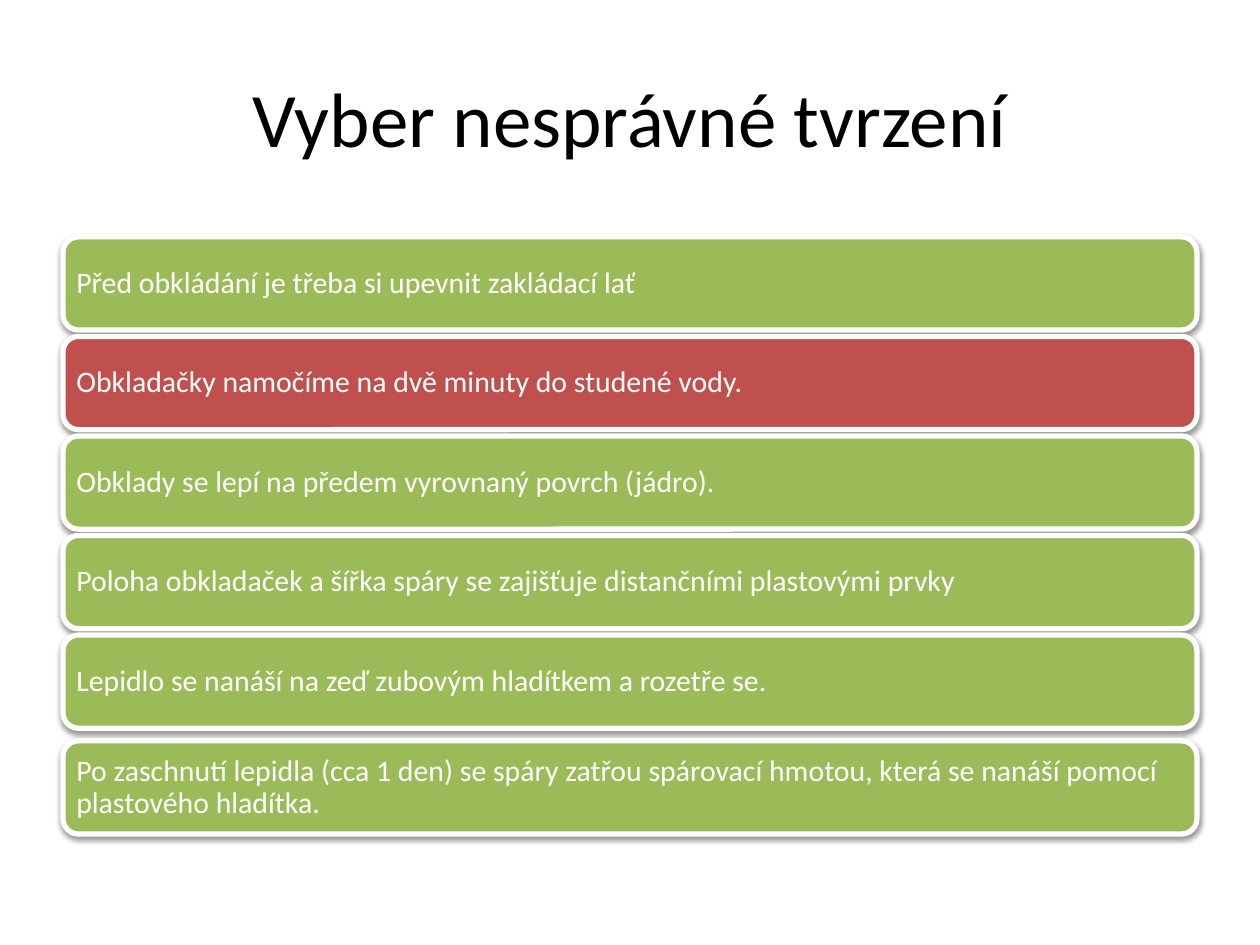
from lxml import etree
from pptx import Presentation
from pptx.dml.color import RGBColor
from pptx.enum.shapes import MSO_SHAPE
from pptx.enum.text import MSO_ANCHOR, PP_ALIGN
from pptx.oxml.ns import qn
from pptx.util import Inches, Pt

ROUNDED = MSO_SHAPE.ROUNDED_RECTANGLE
MIDDLE = MSO_ANCHOR.MIDDLE
LEFT, CENTER = PP_ALIGN.LEFT, PP_ALIGN.CENTER

FONT = "Calibri"
COLORS = {
    "title": "000000",
    "light": "FFFFFF",
    "correct": "9BBB59",
    "incorrect": "C0504D",
    "shadow": "000000",
}

MARGIN, WIDTH = 0.5, 9
FIRST_TOP, STEP, BAR_HEIGHT = 1.88, 0.79, 0.74
LAST_EXTRA_GAP = 0.05

STATEMENTS = [
    ("Před obkládání je třeba si upevnit zakládací lať", "correct"),
    ("Obkladačky namočíme na dvě minuty do studené vody.", "incorrect"),
    ("Obklady se lepí na předem vyrovnaný povrch (jádro).", "correct"),
    ("Poloha obkladaček a šířka spáry se zajišťuje distančními plastovými prvky", "correct"),
    ("Lepidlo se nanáší na zeď zubovým hladítkem a rozetře se.", "correct"),
    ("Po zaschnutí lepidla (cca 1 den) se spáry zatřou spárovací hmotou, "
     "která se nanáší pomocí plastového hladítka.", "correct"),
]


def color(name):
    return RGBColor.from_string(COLORS[name])


def set_text(shape, text, size, color_name, alignment):
    frame = shape.text_frame
    frame.word_wrap = True
    frame.vertical_anchor = MIDDLE
    paragraph = frame.paragraphs[0]
    paragraph.text = text
    paragraph.alignment = alignment
    paragraph.font.name = FONT
    paragraph.font.size = Pt(size)
    paragraph.font.color.rgb = color(color_name)
    return frame


def add_shadow(shape):
    shape.shadow.inherit = False
    effects = shape._element.spPr.find(qn("a:effectLst"))
    shadow = etree.SubElement(
        effects, qn("a:outerShdw"), blurRad="40000", dist="20000",
        dir="5400000", rotWithShape="0")
    shade = etree.SubElement(shadow, qn("a:srgbClr"), val=COLORS["shadow"])
    etree.SubElement(shade, qn("a:alpha"), val="38000")


def add_title(slide, text):
    box = slide.shapes.add_textbox(
        Inches(MARGIN), Inches(0.3), Inches(WIDTH), Inches(1.25))
    set_text(box, text, 44, "title", CENTER)


def add_statement(slide, top, text, fill_name):
    bar = slide.shapes.add_shape(
        ROUNDED, Inches(MARGIN), Inches(top), Inches(WIDTH), Inches(BAR_HEIGHT))
    bar.fill.solid()
    bar.fill.fore_color.rgb = color(fill_name)
    bar.line.color.rgb = color("light")
    bar.line.width = Pt(3)
    add_shadow(bar)
    frame = set_text(bar, text, 17, "light", LEFT)
    frame.margin_left = frame.margin_right = Inches(0.07)
    frame.margin_top = frame.margin_bottom = Inches(0.07)
    frame.paragraphs[0].line_spacing = 0.9


def main():
    presentation = Presentation()
    presentation.slide_width = Inches(10)
    presentation.slide_height = Inches(7.5)
    slide = presentation.slides.add_slide(presentation.slide_layouts[6])
    add_title(slide, "Vyber nesprávné tvrzení")
    last = len(STATEMENTS) - 1
    for index, (text, fill_name) in enumerate(STATEMENTS):
        top = FIRST_TOP + index * STEP
        if index == last:
            top += LAST_EXTRA_GAP
        add_statement(slide, top, text, fill_name)
    presentation.save("out.pptx")


if __name__ == "__main__":
    main()
